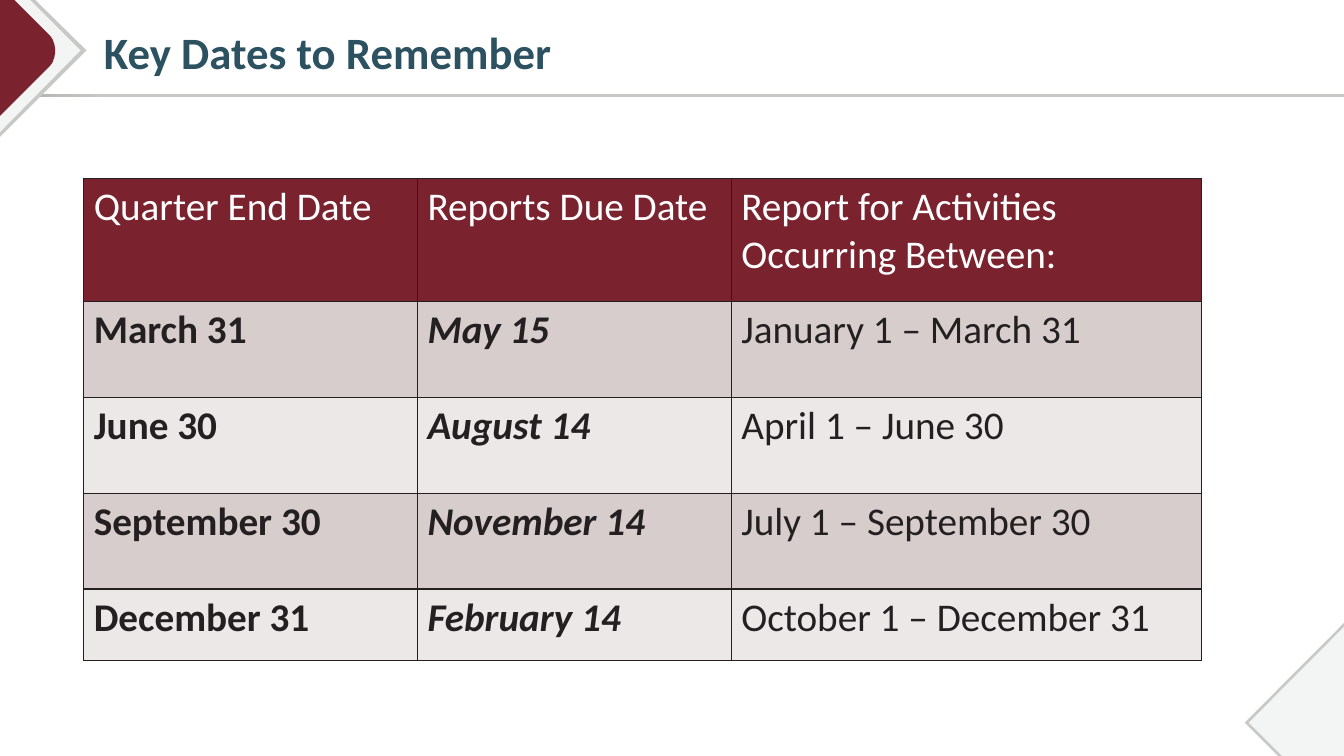
"""Builds the slide of quarterly report due dates."""
from pptx import Presentation
from pptx.dml.color import RGBColor as Rgb
from pptx.enum.shapes import MSO_SHAPE as Shape
from pptx.enum.text import MSO_ANCHOR as Anchor, PP_ALIGN as Align
from pptx.oxml import parse_xml
from pptx.oxml.ns import nsdecls
from pptx.util import Cm, Pt

TITLE = "Key Dates to Remember"
HEADINGS = ("Quarter End Date", "Reports Due Date", "Report for Activities Occurring Between:")
QUARTERS = (
    ("March 31", "May 15", "January 1 – March 31"),
    ("June 30", "August 14", "April 1 – June 30"),
    ("September 30", "November 14", "July 1 – September 30"),
    ("December 31", "February 14", "October 1 – December 31"),
)
COLUMN_STYLES = ({"bold": True}, {"bold": True, "italic": True}, {})
COLORS = {"title": "2C5261", "maroon": "7A232F", "edge": "C8C8C6", "edge_dark": "ABABA8",
          "pale": "F3F4F4", "ink": "242021", "white": "FFFFFF",
          "band_dark": "D7CDCD", "band_light": "ECE8E8"}

SLIDE_W, SLIDE_H = 33.87, 19.05
COLUMN_WIDTHS = (8.41, 7.91, 11.85)
ROW_HEIGHTS = (3.1, 2.42, 2.42, 2.41, 1.8)
TIP_CURVE = ((1.22, 0.86), (1.45, 1.09), (1.45, 1.47), (1.22, 1.7))
CURVE_STEPS = 16
UNITS_PER_CM = 100


def color(name):
    return Rgb.from_string(COLORS[name])


def write(frame, text, size, ink, bold=False, italic=False, spacing=None):
    paragraph = frame.paragraphs[0]
    paragraph.alignment = Align.LEFT
    paragraph.line_spacing = spacing
    run = paragraph.add_run()
    run.text = text
    font = run.font
    font.name, font.size, font.bold, font.italic = "Calibri", Pt(size), bold, italic
    font.color.rgb = color(ink)


def bezier(start, pull_a, pull_b, end, steps):
    for step in range(steps + 1):
        t = step / steps
        weights = ((1 - t) ** 3, 3 * t * (1 - t) ** 2, 3 * t * t * (1 - t), t ** 3)
        yield tuple(sum(w * v for w, v in zip(weights, axis))
                    for axis in zip(start, pull_a, pull_b, end))


def add_corner(shapes, points, fill):
    outline = [(round(x * UNITS_PER_CM), round(y * UNITS_PER_CM)) for x, y in points]
    builder = shapes.build_freeform(*outline[0], scale=Cm(1) / UNITS_PER_CM)
    builder.add_line_segments(outline[1:], close=True)
    corner = builder.convert_to_shape()
    corner.shadow.inherit = False
    corner.fill.solid()
    corner.fill.fore_color.rgb = color(fill)
    corner.line.fill.background()


def add_rule(shapes):
    rule = shapes.add_shape(Shape.RECTANGLE, 0, Cm(2.37), Cm(SLIDE_W), Cm(0.08))
    rule.shadow.inherit = False
    rule.line.fill.background()
    rule.fill.gradient()
    rule.fill.gradient_angle = 0
    for stop, position, name in zip(rule.fill.gradient_stops, (0, 0.08), ("edge_dark", "edge")):
        stop.position = position
        stop.color.rgb = color(name)


def add_borders(cell):
    properties = cell._tc.get_or_add_tcPr()
    for index, side in enumerate(("lnL", "lnR", "lnT", "lnB")):
        properties.insert(index, parse_xml(
            f'<a:{side} {nsdecls("a")} w="12700"><a:solidFill>'
            f'<a:srgbClr val="{COLORS["ink"]}"/></a:solidFill></a:{side}>'))


def add_dates(shapes):
    rows = (HEADINGS,) + QUARTERS
    dates = shapes.add_table(len(rows), len(HEADINGS), Cm(2.11), Cm(4.49),
                             Cm(sum(COLUMN_WIDTHS)), Cm(sum(ROW_HEIGHTS))).table
    for column, width in zip(dates.columns, COLUMN_WIDTHS):
        column.width = Cm(width)
    for r, (row, height) in enumerate(zip(rows, ROW_HEIGHTS)):
        dates.rows[r].height = Cm(height)
        band = "maroon" if r == 0 else ("band_light", "band_dark")[r % 2]
        for c, text in enumerate(row):
            cell = dates.cell(r, c)
            cell.fill.solid()
            cell.fill.fore_color.rgb = color(band)
            add_borders(cell)
            style = COLUMN_STYLES[c] if r else {}
            write(cell.text_frame, text, 28, "ink" if r else "white", **style)


def add_title(title):
    title.left, title.top, title.width, title.height = Cm(2.11), Cm(0.64), Cm(25.76), Cm(2.08)
    frame = title.text_frame
    frame.word_wrap = True
    frame.vertical_anchor = Anchor.TOP
    frame.margin_left, frame.margin_right = Cm(0.51), Cm(0.25)
    frame.margin_top = frame.margin_bottom = Cm(0.13)
    write(frame, TITLE, 32, "title", bold=True, spacing=0.9)


def main():
    deck = Presentation()
    deck.slide_width, deck.slide_height = Cm(SLIDE_W), Cm(SLIDE_H)
    slide = deck.slides.add_slide(deck.slide_layouts[5])
    shapes = slide.shapes
    corners = (
        ([(0, 0), (0.89, 0), (2.18, 1.27), (0, 3.45)], "edge"),
        ([(0, 0), (0.76, 0), (2.03, 1.27), (0, 3.33)], "pale"),
        ([(0, 0), (0.36, 0), *bezier(*TIP_CURVE, CURVE_STEPS), (0, 2.92)], "maroon"),
        ([(SLIDE_W, 15.7), (SLIDE_W, SLIDE_H), (32.21, SLIDE_H), (31.37, 18.21)], "edge"),
        ([(SLIDE_W, 15.8), (SLIDE_W, SLIDE_H), (32.31, SLIDE_H), (31.47, 18.21)], "pale"),
    )
    add_rule(shapes)
    for points, fill in corners:
        add_corner(shapes, points, fill)
    add_title(shapes.title)
    add_dates(shapes)
    deck.save("out.pptx")


if __name__ == "__main__":
    main()
